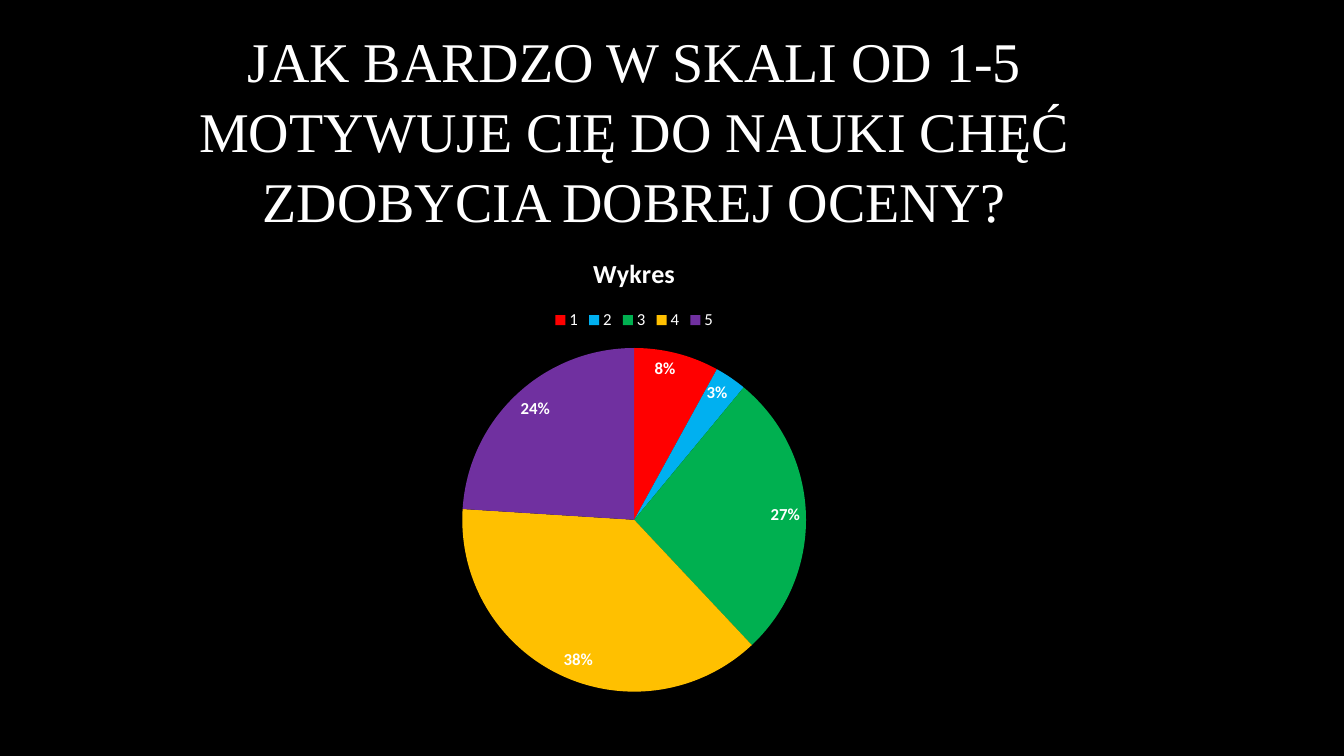
from pptx import Presentation
from pptx.chart.data import CategoryChartData
from pptx.dml.color import RGBColor
from pptx.enum.chart import XL_CHART_TYPE, XL_LABEL_POSITION, XL_LEGEND_POSITION
from pptx.enum.text import MSO_ANCHOR, PP_ALIGN
from pptx.util import Inches, Pt

PIE = XL_CHART_TYPE.PIE
INSIDE_END = XL_LABEL_POSITION.INSIDE_END
LEGEND_TOP = XL_LEGEND_POSITION.TOP
MIDDLE = MSO_ANCHOR.MIDDLE
CENTER = PP_ALIGN.CENTER

COLORS = {"background": "000000", "text": "FFFFFF"}
HEADING_FONT = "Times New Roman"
CHART_FONT = "Calibri"
LEFT, WIDTH = Inches(0.75), Inches(11.08)

QUESTION = "JAK BARDZO W SKALI OD 1-5 MOTYWUJE CIĘ DO NAUKI CHĘĆ ZDOBYCIA DOBREJ OCENY?"
CHART_TITLE = "Wykres"
ANSWERS = [
    ("1", 8, "FF0000"),
    ("2", 3, "00B0F0"),
    ("3", 27, "00B050"),
    ("4", 38, "FFC000"),
    ("5", 24, "7030A0"),
]


def style_font(font, name, size, bold=False):
    font.name = name
    font.size = Pt(size)
    font.bold = bold
    font.color.rgb = RGBColor.from_string(COLORS["text"])


def add_heading(slide, text, top, height):
    frame = slide.shapes.add_textbox(LEFT, top, WIDTH, height).text_frame
    frame.word_wrap = True
    frame.vertical_anchor = MIDDLE
    paragraph = frame.paragraphs[0]
    paragraph.text = text
    paragraph.alignment = CENTER
    paragraph.line_spacing = 1.04
    style_font(paragraph.font, HEADING_FONT, 40)


def add_pie(slide, title, answers, top, height):
    labels, values, colors = zip(*answers)
    chart_data = CategoryChartData()
    chart_data.categories = labels
    chart_data.add_series(title, values)
    chart = slide.shapes.add_chart(PIE, LEFT, top, WIDTH, height, chart_data).chart
    style_font(chart.font, CHART_FONT, 10)

    chart.has_title = True
    title_frame = chart.chart_title.text_frame
    title_frame.text = title
    style_font(title_frame.paragraphs[0].font, CHART_FONT, 18.6, bold=True)
    chart.chart_title.include_in_layout = False

    chart.has_legend = True
    chart.legend.position = LEGEND_TOP
    chart.legend.include_in_layout = False
    style_font(chart.legend.font, CHART_FONT, 12)

    plot = chart.plots[0]
    plot.vary_by_categories = True
    series = plot.series[0]
    for index, color in enumerate(colors):
        fill = series.points[index].format.fill
        fill.solid()
        fill.fore_color.rgb = RGBColor.from_string(color)

    data_labels = series.data_labels
    data_labels.show_percentage = True
    data_labels.show_value = False
    data_labels.number_format = "0%"
    data_labels.number_format_is_linked = False
    data_labels.position = INSIDE_END
    style_font(data_labels.font, CHART_FONT, 12, bold=True)


def main():
    presentation = Presentation()
    presentation.slide_width = Inches(13.33)
    presentation.slide_height = Inches(7.5)
    slide = presentation.slides.add_slide(presentation.slide_layouts[6])
    background = slide.background.fill
    background.solid()
    background.fore_color.rgb = RGBColor.from_string(COLORS["background"])
    add_heading(slide, QUESTION, Inches(0.29), Inches(1.97))
    add_pie(slide, CHART_TITLE, ANSWERS, Inches(2.34), Inches(4.66))
    presentation.save("out.pptx")


if __name__ == "__main__":
    main()
